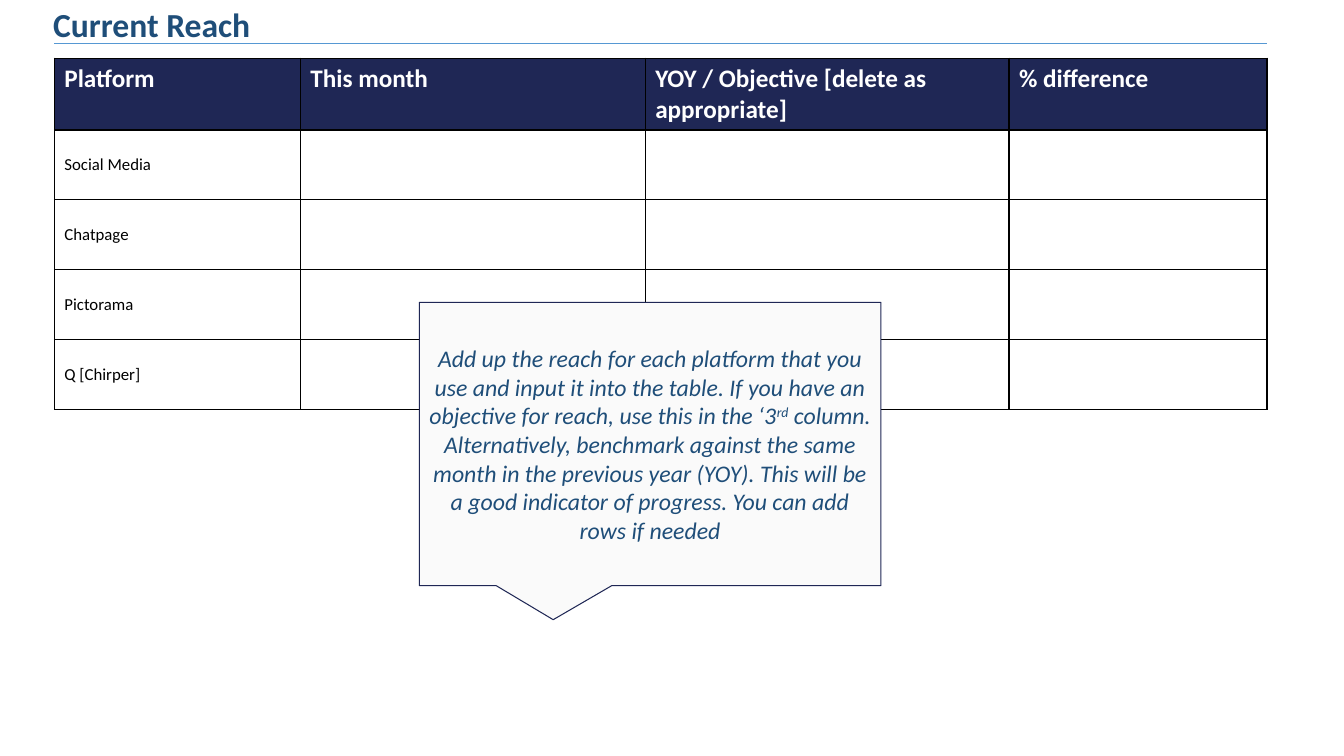
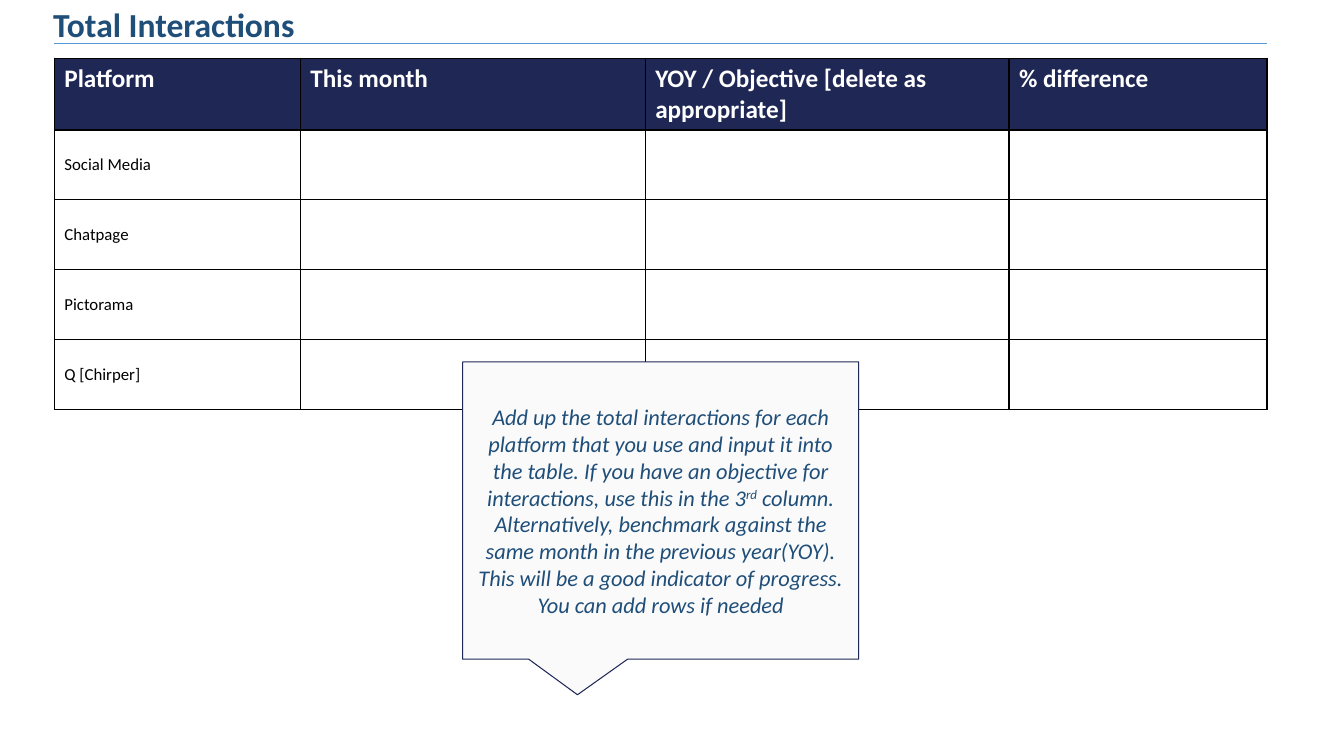
"""Build the two monthly social media report slides: reach and interactions."""
from lxml.etree import SubElement
from pptx import Presentation
from pptx.dml.color import RGBColor
from pptx.enum.shapes import MSO_CONNECTOR, MSO_SHAPE
from pptx.enum.text import MSO_ANCHOR, PP_ALIGN
from pptx.oxml.ns import qn
from pptx.util import Cm, Pt

NAVY, BLUE, RULE = "1F2755", "1F4E79", "5698D3"
WHITE, BLACK, PALE = "FFFFFF", "000000", "FAFAFA"
FONT = "Calibri"
LEFT, RIGHT = 1.37, 31.93
COLUMNS = [
    ("Platform", 6.2),
    ("This month", 8.69),
    ("YOY / Objective [delete as appropriate]", 9.17),
    ("% difference", 6.5),
]
PLATFORMS = ["Social Media", "Chatpage", "Pictorama", "Q [Chirper]"]
ROW_HEIGHT = 1.76

SLIDES = [
    ("Current Reach", (10.57, 7.62, 11.63, 7.14), 17,
     "Add up the reach for each platform that you use and input it into the table. "
     "If you have an objective for reach, use this in the ‘3",
     " column. Alternatively, benchmark against the same month in the previous year (YOY). "
     "This will be a good indicator of progress. You can add rows if needed"),
    ("Total Interactions", (11.66, 9.12, 9.98, 7.49), 16,
     "Add up the total interactions for each platform that you use and input it into the table. "
     "If you have an objective for interactions, use this in the 3",
     " column. Alternatively, benchmark against the same month in the previous year(YOY). "
     "This will be a good indicator of progress. You can add rows if needed"),
]


def rgb(value):
    return RGBColor.from_string(value)


def add_run(p, text, size, color, bold=False, italic=False):
    r = p.add_run()
    r.text = text
    r.font.name, r.font.size = FONT, Pt(size)
    r.font.bold, r.font.italic = bold, italic
    r.font.color.rgb = rgb(color)
    return r


prs = Presentation()
prs.slide_width, prs.slide_height = Cm(33.87), Cm(19.05)

for title, callout_box, callout_size, before, after in SLIDES:
    s = prs.slides.add_slide(prs.slide_layouts[6])

    table = s.shapes.add_table(
        len(PLATFORMS) + 1, len(COLUMNS), Cm(LEFT), Cm(1.47),
        Cm(RIGHT - LEFT), Cm(ROW_HEIGHT * (len(PLATFORMS) + 1))).table
    table.first_row = table.horz_banding = False
    for column, (heading, width) in zip(table.columns, COLUMNS):
        column.width = Cm(width)
    for i, row in enumerate(table.rows):
        row.height = Cm(ROW_HEIGHT)
        for j, cell in enumerate(row.cells):
            tcPr = cell._tc.get_or_add_tcPr()
            for side in ("lnL", "lnR", "lnT", "lnB"):
                thick = (i, side) in ((0, "lnB"), (1, "lnT"))
                ln = SubElement(tcPr, qn("a:" + side), w=str(Pt(2 if thick else 1)))
                SubElement(SubElement(ln, qn("a:solidFill")), qn("a:srgbClr"), val=BLACK)
            cell.fill.solid()
            cell.fill.fore_color.rgb = rgb(WHITE if i else NAVY)
            p = cell.text_frame.paragraphs[0]
            if i == 0:
                add_run(p, COLUMNS[j][0], 18, WHITE, bold=True)
            elif j == 0:
                cell.vertical_anchor = MSO_ANCHOR.MIDDLE
                add_run(p, PLATFORMS[i - 1], 12, BLACK)

    tf = s.shapes.add_textbox(0, Cm(0.1), prs.slide_width, Cm(1.22)).text_frame
    tf.word_wrap = True
    p = tf.paragraphs[0]
    p.line_spacing = 0.9
    pPr = p._p.get_or_add_pPr()
    pPr.set("marL", str(Cm(1.09)))
    pPr.set("indent", str(-Cm(1.09)))
    SubElement(SubElement(pPr, qn("a:buClr")), qn("a:srgbClr"), val=WHITE)
    SubElement(pPr, qn("a:buChar"), char="•")
    add_run(p, title, 24, BLUE, bold=True)

    rule = s.shapes.add_connector(
        MSO_CONNECTOR.STRAIGHT, Cm(LEFT), Cm(1.09), Cm(RIGHT), Cm(1.09))
    rule.line.color.rgb = rgb(RULE)
    rule.line.width = Pt(0.75)
    SubElement(rule._element.spPr, qn("a:effectLst"))

    callout = s.shapes.add_shape(
        MSO_SHAPE.RECTANGULAR_CALLOUT, *[Cm(v) for v in callout_box])
    callout.adjustments[0], callout.adjustments[1] = -0.21, 0.62
    callout.shadow.inherit = False
    callout.fill.solid()
    callout.fill.fore_color.rgb = rgb(PALE)
    callout.line.color.rgb = rgb(NAVY)
    callout.line.width = Pt(0.75)
    tf = callout.text_frame
    tf.word_wrap = True
    tf.vertical_anchor = MSO_ANCHOR.MIDDLE
    p = tf.paragraphs[0]
    p.alignment = PP_ALIGN.CENTER
    add_run(p, before, callout_size, BLUE, italic=True)
    r = add_run(p, "rd", callout_size, BLUE, italic=True)
    r.font._element.set("baseline", "30000")
    add_run(p, after, callout_size, BLUE, italic=True)

prs.save("out.pptx")
